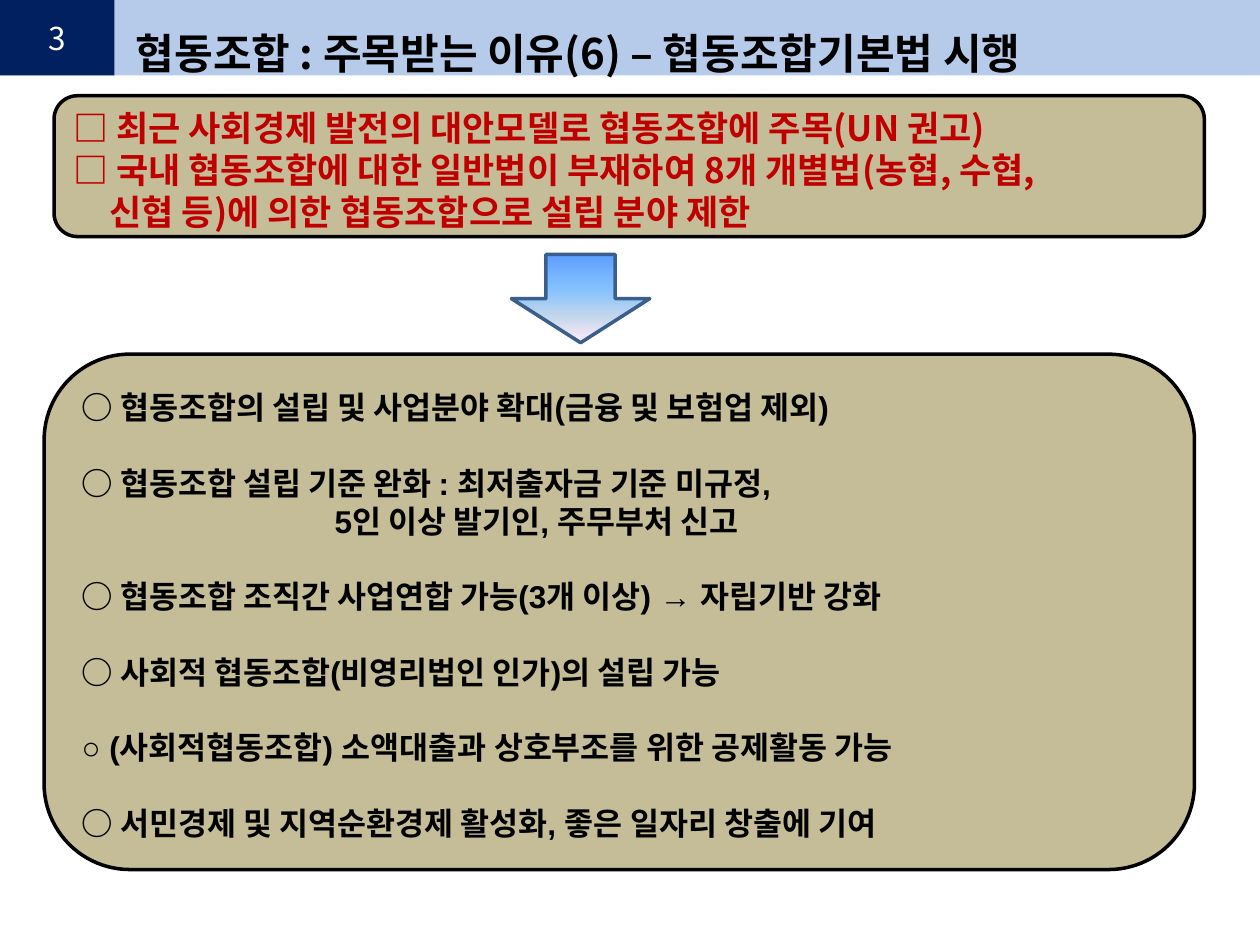
from lxml.etree import SubElement
from pptx import Presentation
from pptx.dml.color import RGBColor
from pptx.enum.shapes import MSO_SHAPE
from pptx.enum.text import MSO_ANCHOR, PP_ALIGN
from pptx.oxml.ns import qn
from pptx.util import Cm, Pt

COLORS = {
    "band": "B6CAEA", "navy": "002060", "panel": "C4BD97", "red": "C00000",
    "black": "000000", "white": "FFFFFF", "arrow_line": "3A5F8C",
}
ARROW_STOPS = [(0, "5E9EFF"), (40, "85C2FF"), (70, "C4D6EB"), (100, "FFEBFA")]
KOREAN = "Noto Sans CJK KR"
LINE_RATIO = 1.2  # line pitch relative to the font size

# Each line: text, left indent in cm, whether a gap comes before it
BACKGROUND = [
    ("□ 최근 사회경제 발전의 대안모델로 협동조합에 주목(UN 권고)", 0, False),
    ("□ 국내 협동조합에 대한 일반법이 부재하여 8개 개별법(농협, 수협,", 0, False),
    ("신협 등)에 의한 협동조합으로 설립 분야 제한", 0.73, False),
]
EFFECTS = [
    ("○ 협동조합의 설립 및 사업분야 확대(금융 및 보험업 제외)", 0, False),
    ("○ 협동조합 설립 기준 완화 : 최저출자금 기준 미규정,", 0, True),
    ("5인 이상 발기인, 주무부처 신고", 5.1, False),
    ("○ 협동조합 조직간 사업연합 가능(3개 이상) → 자립기반 강화", 0, True),
    ("○ 사회적 협동조합(비영리법인 인가)의 설립 가능", 0, True),
    ("○ (사회적협동조합) 소액대출과 상호부조를 위한 공제활동 가능", 0, True),
    ("○ 서민경제 및 지역순환경제 활성화, 좋은 일자리 창출에 기여", 0, True),
]


def rgb(name):
    return RGBColor.from_string(COLORS[name])


def add_block(s, kind, box, fill=None, line=None):
    sp = s.shapes.add_shape(kind, *(Cm(v) for v in box))
    sp.shadow.inherit = False
    if fill:
        sp.fill.solid()
        sp.fill.fore_color.rgb = rgb(fill)
    if line:
        sp.line.color.rgb = rgb(line)
        sp.line.width = Pt(2)
    else:
        sp.line.fill.background()
    return sp


def write_lines(tf, lines, size, color, font=KOREAN, bold=True, align=PP_ALIGN.LEFT):
    tf.word_wrap = True
    pitch = Pt(size * LINE_RATIO)
    for i, (text, indent, gap) in enumerate(lines):
        p = tf.paragraphs[0] if i == 0 else tf.add_paragraph()
        p.text = text
        p.alignment = align
        p.line_spacing = pitch
        p.space_before = pitch if gap else Pt(0)
        p.font.size = Pt(size)
        p.font.bold = bold
        p.font.name = font
        p.font.color.rgb = rgb(color)
        pPr = p._p.get_or_add_pPr()
        pPr.set("marL", str(Cm(indent)))
        for r in p.runs:
            SubElement(r._r.get_or_add_rPr(), qn("a:ea"), typeface=KOREAN)


def add_header(s, left, top, width, height, number, title):
    add_block(s, MSO_SHAPE.RECTANGLE, (left, top, width, height), "band")
    badge = add_block(s, MSO_SHAPE.RECTANGLE, (left, top, 2.31, height), "navy")
    badge.text_frame.vertical_anchor = MSO_ANCHOR.MIDDLE
    write_lines(badge.text_frame, [(number, 0, False)], 18, "white",
                bold=False, align=PP_ALIGN.CENTER)
    tb = s.shapes.add_textbox(Cm(left + 2.49), Cm(top + 0.33), Cm(21.79), Cm(1.27))
    tb.text_frame.margin_top = Cm(0.22)
    write_lines(tb.text_frame, [(title, 0, False)], 24, "black")


def add_panel(s, box, lines, size, color, font=KOREAN, align=PP_ALIGN.LEFT):
    sp = add_block(s, MSO_SHAPE.ROUNDED_RECTANGLE, box, "panel", "black")
    tf = sp.text_frame
    tf.vertical_anchor = MSO_ANCHOR.MIDDLE
    tf.margin_top = Cm(0.25)
    write_lines(tf, lines, size, color, font, align=align)


def add_arrow(s, box):
    sp = add_block(s, MSO_SHAPE.DOWN_ARROW, box, line="arrow_line")
    sp.fill.gradient()
    sp.fill.gradient_angle = 270
    stops = sp._element.spPr.find(qn("a:gradFill")).find(qn("a:gsLst"))
    for old in list(stops):
        stops.remove(old)
    for percent, color in ARROW_STOPS:
        gs = SubElement(stops, qn("a:gs"), pos=str(percent * 1000))
        SubElement(gs, qn("a:srgbClr"), val=color)


def main():
    prs = Presentation()
    prs.slide_width, prs.slide_height = Cm(25.4), Cm(19.05)
    s = prs.slides.add_slide(prs.slide_layouts[6])
    add_header(s, 0, 0, 25.4, 1.52, "3",
               "협동조합 : 주목받는 이유(6) – 협동조합기본법 시행")
    add_panel(s, (1.09, 1.93, 23.19, 2.84), BACKGROUND, 20, "red")
    add_panel(s, (0.89, 7.14, 23.19, 10.39), EFFECTS, 18, "black",
              "Arial", PP_ALIGN.JUSTIFY)
    add_arrow(s, (10.31, 5.13, 2.79, 1.78))
    prs.save("out.pptx")


if __name__ == "__main__":
    main()
